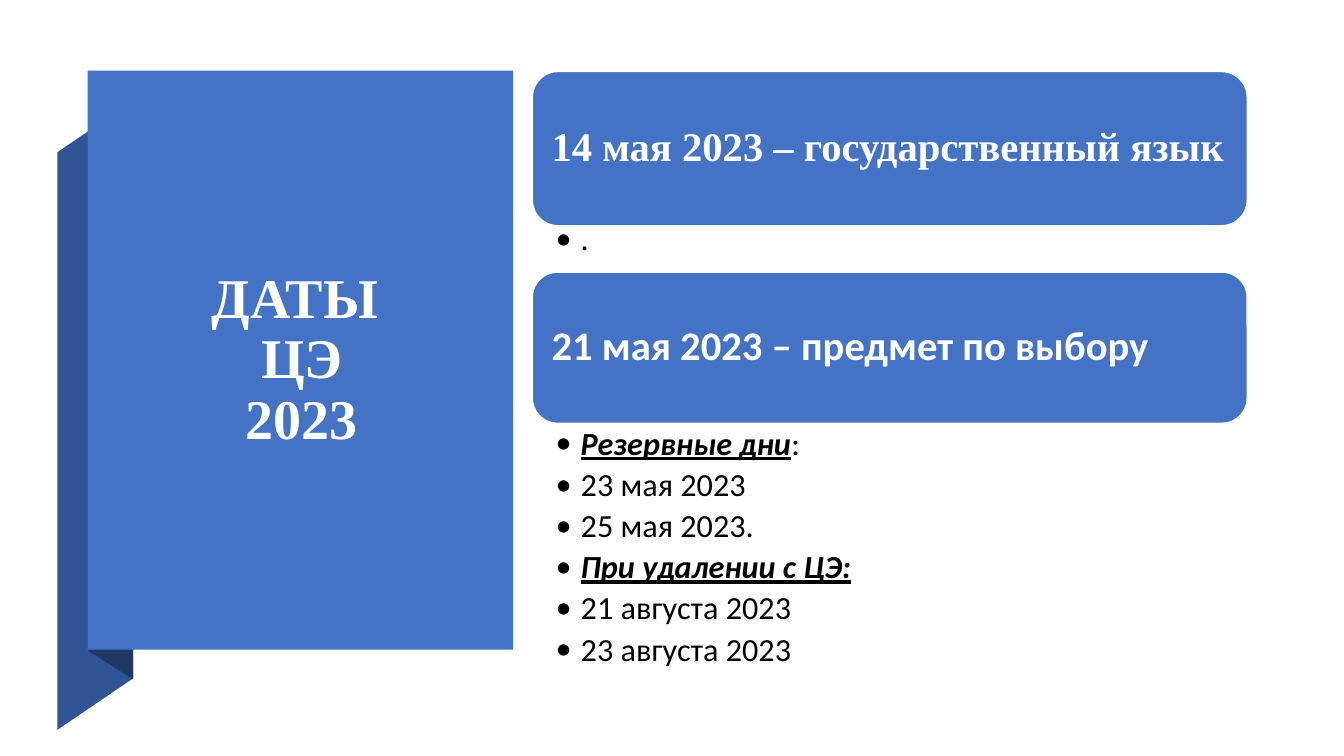
from lxml import etree
from pptx import Presentation
from pptx import util as u
from pptx.dml.color import RGBColor
from pptx.enum import shapes, text
from pptx.oxml.ns import qn

WIDTH, HEIGHT = 13.33, 7.5
BLUE, FOLD, DARK, WHITE, BLACK = "4472C4", "2F5597", "203864", "FFFFFF", "000000"
SERIF, SANS = "Times New Roman", "Calibri"

TITLE = "ДАТЫ \vЦЭ\v2023"
EXAMS = [
    {"heading": "14 мая 2023 – государственный язык", "font": SERIF,
     "top": 0.71, "height": 1.53, "notes_top": 2.17, "notes_height": 0.53,
     "notes": [("", ".")]},
    {"heading": "21 мая 2023 – предмет по выбору", "font": SANS,
     "top": 2.7, "height": 1.5, "notes_top": 4.2, "notes_height": 2.63,
     "notes": [("Резервные дни", ":"), ("", "23 мая 2023"), ("", "25 мая 2023."),
               ("При удалении с ЦЭ:", ""), ("", "21 августа 2023"), ("", "23 августа 2023")]},
]
RIBBON = [
    (FOLD, [(0.57, 7.24), (1.32, 6.73), (1.32, 1), (0.57, 1.51)]),
    (DARK, [(0.88, 6.46), (1.32, 6.74), (1.32, 0.99), (0.88, 0.7)]),
]
PANEL = (0.87, 0.7, 4.22, 5.745)
TITLE_BOX = (1.06, 1.61, 3.87, 3.94)
LIST_LEFT, LIST_WIDTH, CARD_PAD = 5.28, 7.09, 0.07


def rgb(value):
    return RGBColor.from_string(value)


def inches(*values):
    return [u.Inches(value) for value in values]


def paint(shape, fill, line=None):
    shape.shadow.inherit = False
    shape.fill.solid()
    shape.fill.fore_color.rgb = rgb(fill)
    if line:
        shape.line.color.rgb = rgb(line)
        shape.line.width = u.Pt(1)
    else:
        shape.line.fill.background()


def style(paragraph, font, size, color, after, bold=False):
    paragraph.font.name = font
    paragraph.font.size = u.Pt(size)
    paragraph.font.color.rgb = rgb(color)
    paragraph.font.bold = bold
    paragraph.line_spacing = 0.9
    paragraph.space_after = u.Pt(after)


def set_frame(frame, side, edge, anchor):
    frame.word_wrap = True
    frame.margin_left = frame.margin_right = u.Inches(side)
    frame.margin_top = frame.margin_bottom = u.Inches(edge)
    frame.vertical_anchor = anchor


def add_bullet(paragraph):
    properties = paragraph._p.get_or_add_pPr()
    indent = u.Inches(0.25)
    properties.set("marL", str(indent))
    properties.set("indent", str(-indent))
    etree.SubElement(properties, qn("a:buFont")).set("typeface", SANS)
    etree.SubElement(properties, qn("a:buChar")).set("char", "•")


def add_exam(group, exam):
    top, height = exam["top"], exam["height"]
    card = group.add_shape(shapes.MSO_SHAPE.ROUNDED_RECTANGLE,
                           *inches(LIST_LEFT, top, LIST_WIDTH, height))
    paint(card, BLUE, WHITE)

    heading = group.add_textbox(*inches(LIST_LEFT + CARD_PAD, top + CARD_PAD,
                                        LIST_WIDTH - 2 * CARD_PAD, height - 2 * CARD_PAD)).text_frame
    set_frame(heading, 0.12, 0.12, text.MSO_ANCHOR.MIDDLE)
    heading.text = exam["heading"]
    style(heading.paragraphs[0], exam["font"], 29, WHITE, 10, True)

    notes = group.add_textbox(*inches(LIST_LEFT, exam["notes_top"],
                                      LIST_WIDTH, exam["notes_height"])).text_frame
    set_frame(notes, 0.23, 0.04, text.MSO_ANCHOR.TOP)
    for index, (label, plain) in enumerate(exam["notes"]):
        note = notes.add_paragraph() if index else notes.paragraphs[0]
        note.level = 1
        style(note, SANS, 23, BLACK, 4.6)
        add_bullet(note)
        if label:
            run = note.add_run()
            run.text = label
            run.font.bold = run.font.italic = run.font.underline = True
        if plain:
            note.add_run().text = plain


def main():
    deck = Presentation()
    deck.slide_width, deck.slide_height = inches(WIDTH, HEIGHT)
    slide = deck.slides.add_slide(deck.slide_layouts[5])
    title = slide.shapes.title

    for color, corners in RIBBON:
        start, *others = [inches(*corner) for corner in corners]
        outline = slide.shapes.build_freeform(*start)
        outline.add_line_segments(others, close=True)
        paint(outline.convert_to_shape(), color)
    panel = slide.shapes.add_shape(shapes.MSO_SHAPE.RECTANGLE, *inches(*PANEL))
    paint(panel, BLUE)

    panel._element.addnext(title._element)
    title.left, title.top, title.width, title.height = inches(*TITLE_BOX)
    set_frame(title.text_frame, 0.1, 0.05, text.MSO_ANCHOR.MIDDLE)
    title.text_frame.text = TITLE
    style(title.text_frame.paragraphs[0], SERIF, 40, WHITE, 6, True)
    title.text_frame.paragraphs[0].alignment = text.PP_ALIGN.CENTER

    exam_list = slide.shapes.add_group_shape().shapes
    for exam in EXAMS:
        add_exam(exam_list, exam)
    deck.save("out.pptx")


if __name__ == "__main__":
    main()
